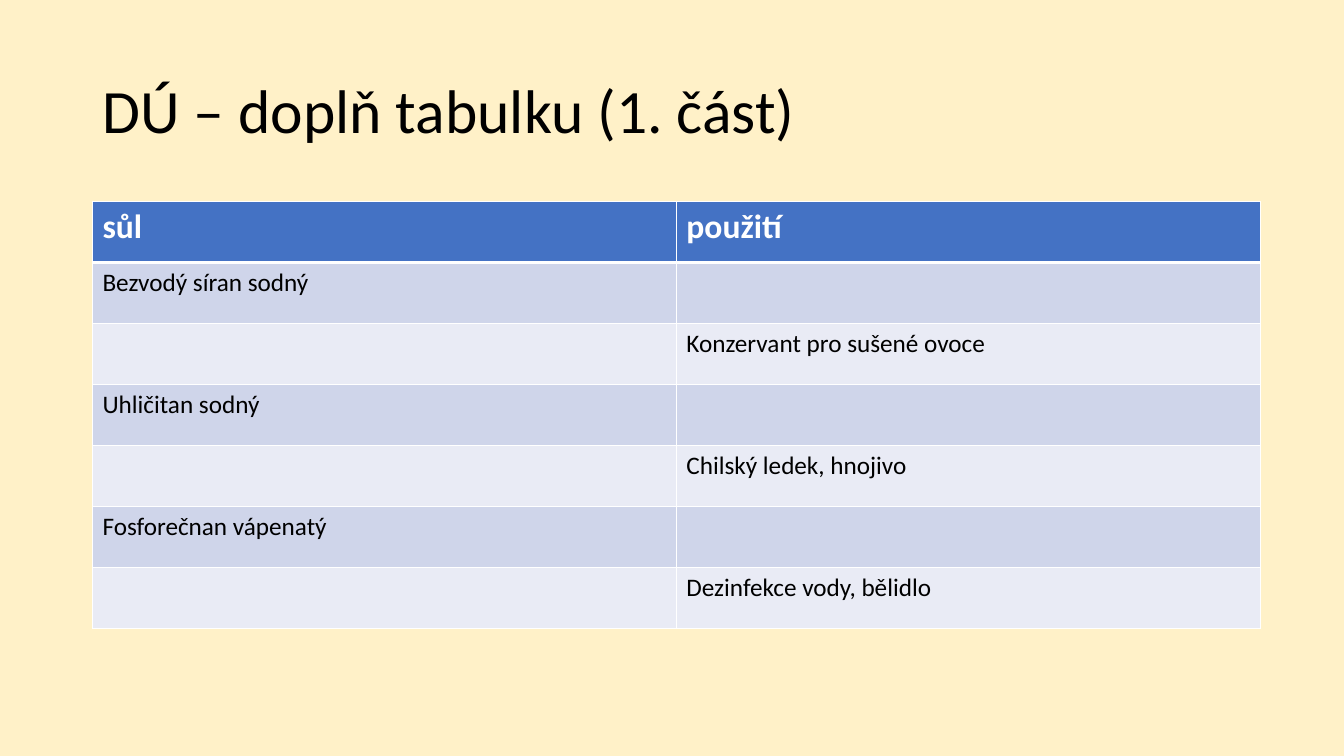
from lxml.etree import SubElement
from pptx import Presentation
from pptx.dml.color import RGBColor
from pptx.enum.text import MSO_ANCHOR, PP_ALIGN
from pptx.oxml.ns import qn
from pptx.util import Cm, Pt

COLORS = {
    "background": "FFF1C8",
    "title": "000000",
    "header": "4472C4",
    "header_text": "FFFFFF",
    "odd_row": "CFD5EA",
    "even_row": "E9EBF5",
    "body_text": "000000",
    "border": "FFFFFF",
}
FONT = "Calibri"
TITLE = "DÚ – doplň tabulku (1. část)"
SALT_USES = [
    ("sůl", "použití"),
    ("Bezvodý síran sodný", ""),
    ("", "Konzervant pro sušené ovoce"),
    ("Uhličitan sodný", ""),
    ("", "Chilský ledek, hnojivo"),
    ("Fosforečnan vápenatý", ""),
    ("", "Dezinfekce vody, bělidlo"),
]


def color(name):
    return RGBColor.from_string(COLORS[name])


def style_font(paragraph, size, color_name, bold=False):
    font = paragraph.font
    font.name, font.size, font.bold = FONT, Pt(size), bold
    font.color.rgb = color(color_name)


def add_border(cell, side, width):
    line = SubElement(cell._tc.get_or_add_tcPr(), qn(f"a:ln{side}"), w=str(Pt(width)))
    fill = SubElement(line, qn("a:solidFill"))
    SubElement(fill, qn("a:srgbClr"), val=COLORS["border"])


def place_title(slide, left, top, width, height):
    title = slide.shapes.title
    title.left, title.top = Cm(left), Cm(top)
    title.width, title.height = Cm(width), Cm(height)
    frame = title.text_frame
    frame.text = TITLE
    frame.vertical_anchor = MSO_ANCHOR.MIDDLE
    heading = frame.paragraphs[0]
    heading.alignment = PP_ALIGN.LEFT
    heading.line_spacing = 0.9
    style_font(heading, 44, "title")


def fill_cell(cell, text, row):
    is_header = row == 0
    for side in "LRTB":
        under_header = (row, side) in ((0, "B"), (1, "T"))
        add_border(cell, side, 3 if under_header else 1)
    cell.fill.solid()
    band = "header" if is_header else "odd_row" if row % 2 else "even_row"
    cell.fill.fore_color.rgb = color(band)
    cell.text = text
    style_font(
        cell.text_frame.paragraphs[0],
        24 if is_header else 18,
        "header_text" if is_header else "body_text",
        is_header,
    )


def place_salt_table(slide, left, top, width, height):
    salts = slide.shapes.add_table(
        len(SALT_USES), len(SALT_USES[0]), Cm(left), Cm(top), Cm(width), Cm(height)
    ).table
    for row, texts in enumerate(SALT_USES):
        for column, text in enumerate(texts):
            fill_cell(salts.cell(row, column), text, row)


def main():
    deck = Presentation()
    deck.slide_width, deck.slide_height = Cm(33.87), Cm(19.05)
    slide = deck.slides.add_slide(deck.slide_layouts[5])
    slide.background.fill.solid()
    slide.background.fill.fore_color.rgb = color("background")
    place_title(slide, 2.33, 1.01, 29.21, 3.68)
    place_salt_table(slide, 2.33, 5.08, 29.43, 10.77)
    deck.save("out.pptx")


if __name__ == "__main__":
    main()
